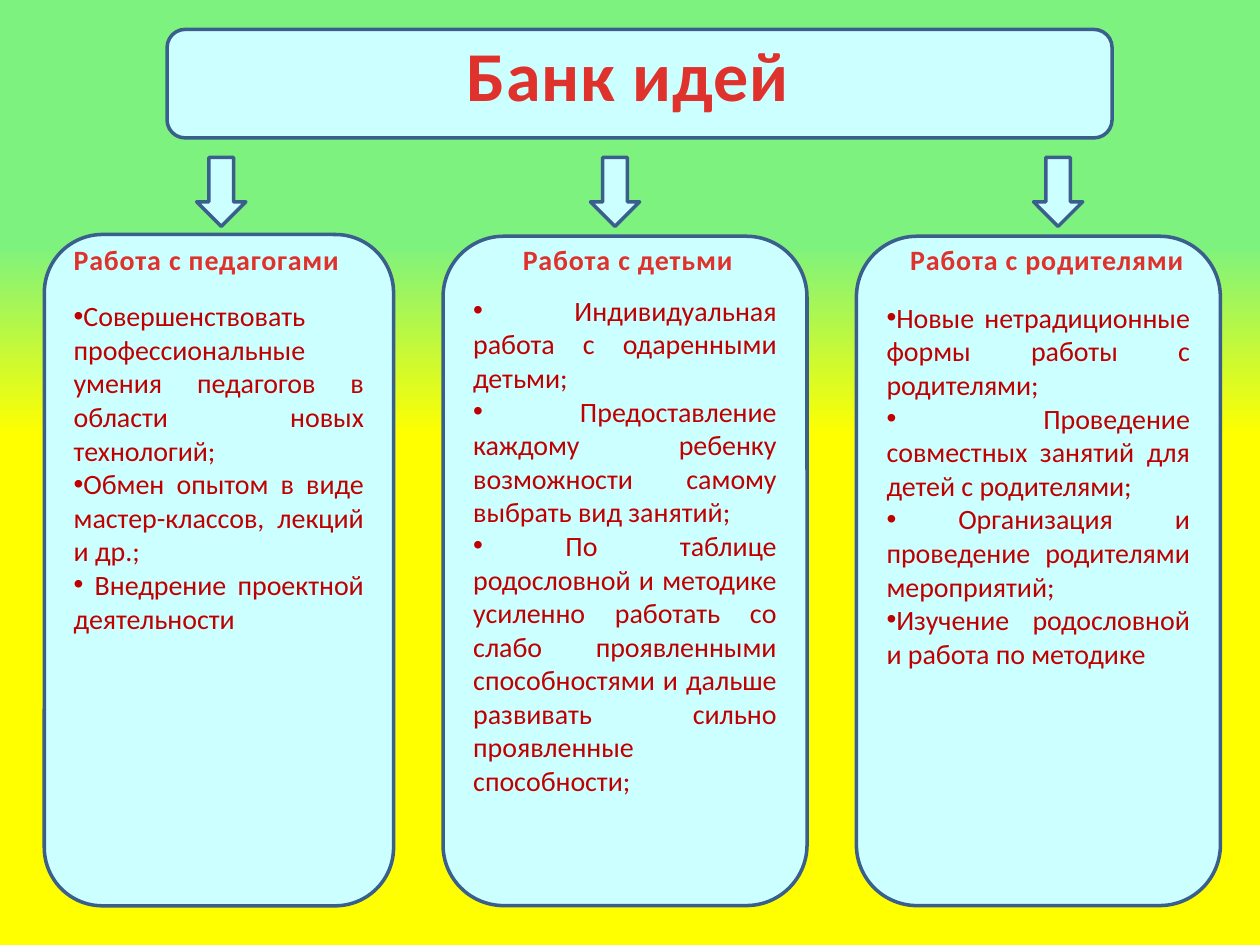
from lxml import etree
from pptx import Presentation
from pptx.dml.color import RGBColor
from pptx.enum.shapes import MSO_SHAPE
from pptx.enum.text import MSO_ANCHOR, MSO_AUTO_SIZE, PP_ALIGN
from pptx.oxml.ns import qn
from pptx.util import Pt

ROUNDED, DOWN_ARROW = MSO_SHAPE.ROUNDED_RECTANGLE, MSO_SHAPE.DOWN_ARROW
TOP, MIDDLE = MSO_ANCHOR.TOP, MSO_ANCHOR.MIDDLE
CENTER, JUSTIFY = PP_ALIGN.CENTER, PP_ALIGN.JUSTIFY
NO_AUTOFIT = MSO_AUTO_SIZE.NONE

color = RGBColor.from_string
PALE_BLUE, BORDER_BLUE, DARK_RED = "CCFFFF", "3A5F8C", "C00000"
HEADING_STOPS = [(0.25, "E0322D"), (1, "A2201C")]
BACKGROUND_STOPS = [(0.26, "7EF27E"), (0.46, "FFFF00")]


def set_gradient(fill, stops):
    """Fill from top to bottom with two (position, hex colour) stops."""
    fill.gradient()
    fill.gradient_angle = 270
    for stop, (position, value) in zip(fill.gradient_stops, stops):
        stop.position = position
        stop.color.rgb = color(value)


def write_text(shape, lines, size=16, align=CENTER, anchor=TOP, wrap=True,
               heading=True, bullet=None):
    """Headings are bold, spaced and gradient filled; other text is dark red."""
    frame = shape.text_frame
    frame.auto_size = NO_AUTOFIT
    frame.word_wrap = wrap
    frame.vertical_anchor = anchor
    for index, line in enumerate(lines):
        para = frame.add_paragraph() if index else frame.paragraphs[0]
        para.alignment = align
        if bullet:
            properties = para._p.get_or_add_pPr()
            properties.set("marL", "0")
            properties.set("indent", "0")
            etree.SubElement(properties, qn("a:buFont")).set("typeface", "Arial")
            etree.SubElement(properties, qn("a:buChar")).set("char", bullet)
        span = para.add_run()
        span.text = line
        span.font.name = "Calibri"
        span.font.size = Pt(size)
        if heading:
            span.font.bold = True
            span._r.get_or_add_rPr().set("spc", "50")
            set_gradient(span.font.fill, HEADING_STOPS)
        else:
            span.font.color.rgb = color(DARK_RED)


deck = Presentation()
deck.slide_width, deck.slide_height = Pt(720), Pt(540)
page = deck.slides.add_slide(deck.slide_layouts[5])
set_gradient(page.background.fill, BACKGROUND_STOPS)
shapes = page.shapes

# Panels: banner, three columns, three arrows
banner = shapes.add_shape(ROUNDED, Pt(95.5), Pt(16.8), Pt(540), Pt(62))
panels = [banner]

title = shapes.title
title.left, title.top, title.width, title.height = Pt(247.7), Pt(0), Pt(221.8), Pt(84.2)
write_text(title, ["Банк идей"], size=40, anchor=MIDDLE)
banner._element.addnext(title._element)  # the title lies on the banner

# left, top, width, height, space above text, arrow left,
# heading (left, width, wrap, text), points
columns = [
    (25.3, 134, 199.6, 383.6, 27, 112.4,
     (33.8, 168.5, False, "Работа с педагогами"),
     ["Совершенствовать профессиональные умения педагогов в области новых технологий;",
      "Обмен опытом в виде мастер-классов, лекций и др.;",
      " Внедрение проектной деятельности"]),
    (253.2, 135, 208, 382.5, 22.5, 337.4,
     (279.3, 159, True, "Работа с детьми"),
     [" Индивидуальная работа с одаренными детьми;",
      " Предоставление каждому ребенку возможности самому выбрать вид занятий;",
      " По таблице родословной и методике усиленно работать со слабо проявленными "
      "способностями и дальше развивать сильно проявленные способности;"]),
    (489.4, 135, 208, 382.5, 26.5, 590.6,
     (511.9, 172.8, False, "Работа с родителями"),
     ["Новые нетрадиционные формы работы с родителями;",
      " Проведение совместных занятий для детей с родителями;",
      " Организация и проведение родителями мероприятий;",
      "Изучение родословной и работа по методике"]),
]

for left, top, width, height, space_above, arrow_left, heading, points in columns:
    box = shapes.add_shape(ROUNDED, Pt(left), Pt(top), Pt(width), Pt(height))
    box.text_frame.margin_top = Pt(space_above)
    write_text(box, points, align=JUSTIFY, heading=False, bullet="•")

    heading_left, heading_width, wrap, text = heading
    label = shapes.add_textbox(Pt(heading_left), Pt(134.8), Pt(heading_width), Pt(26.7))
    write_text(label, [text], wrap=wrap)

    arrow = shapes.add_shape(DOWN_ARROW, Pt(arrow_left), Pt(90), Pt(28.1), Pt(39.4))
    panels += [box, arrow]

for panel in panels:
    panel.shadow.inherit = False
    panel.fill.solid()
    panel.fill.fore_color.rgb = color(PALE_BLUE)
    panel.line.color.rgb = color(BORDER_BLUE)
    panel.line.width = Pt(2)

deck.save("out.pptx")
